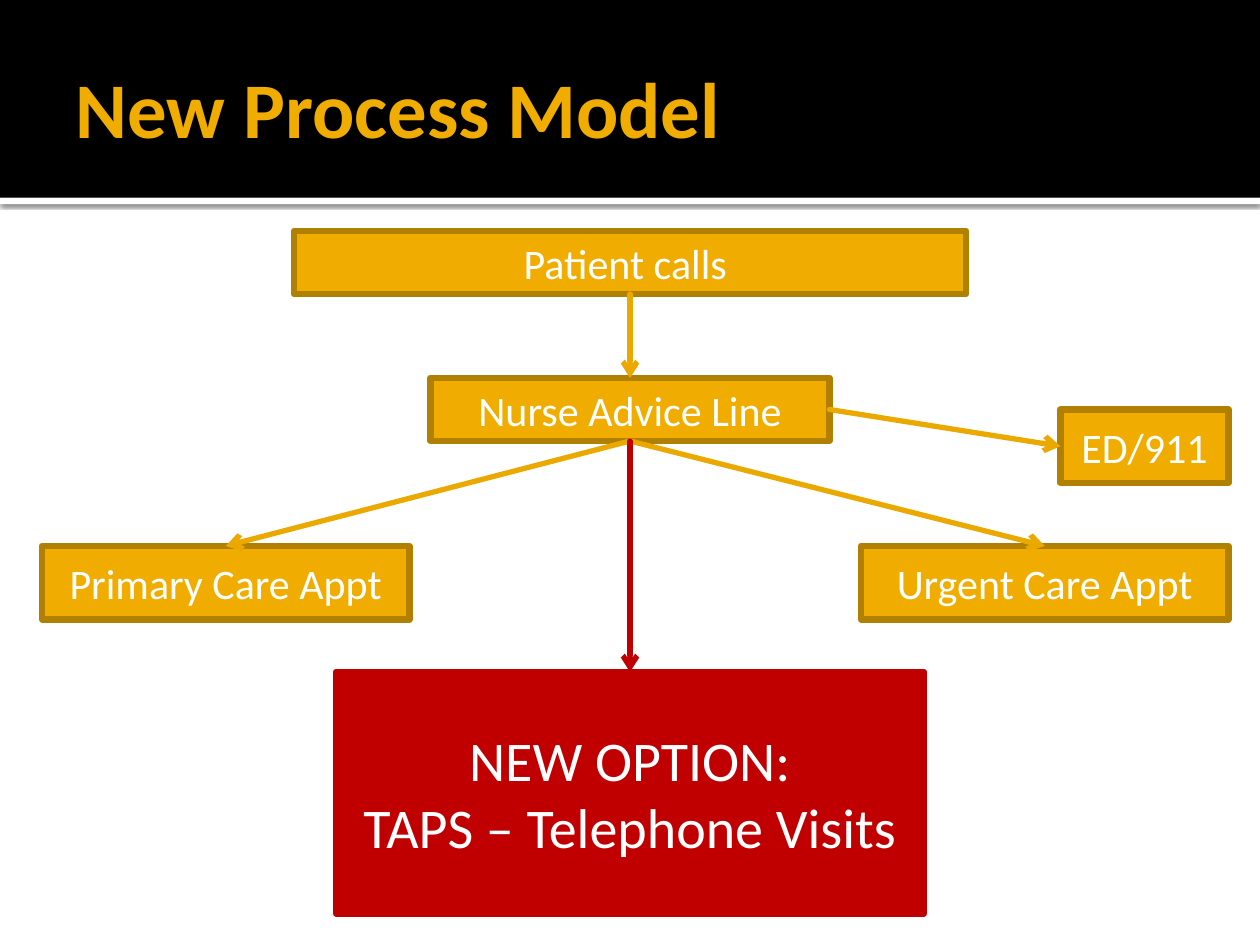
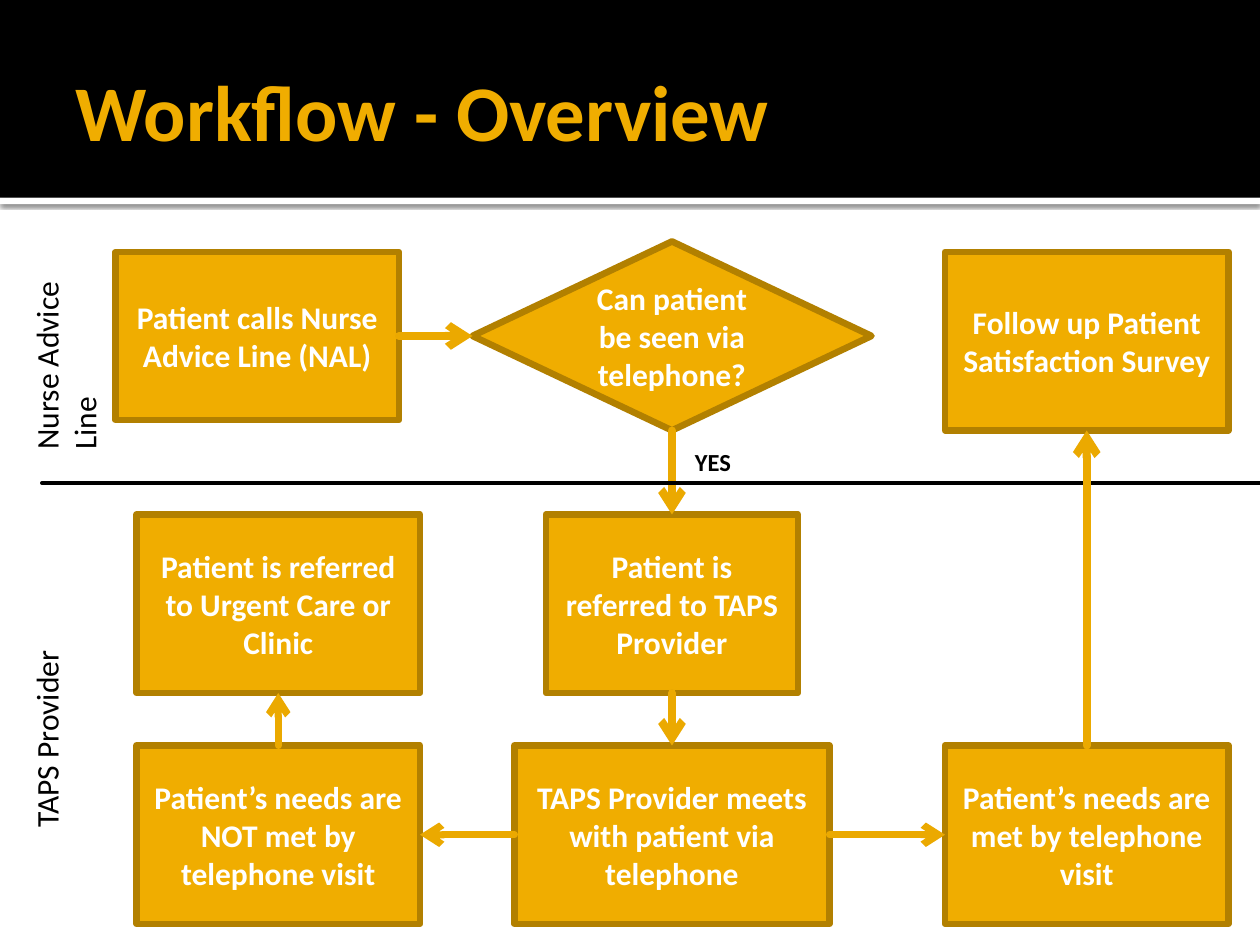
from lxml import etree
from pptx import Presentation
from pptx import util as u
from pptx.dml.color import RGBColor
from pptx.enum import shapes, text
from pptx.oxml.ns import qn

GOLD = RGBColor(0xF0, 0xAD, 0x00)
EDGE = RGBColor(0xB2, 0x80, 0x00)
ARROW = RGBColor(0xEB, 0xA9, 0x00)
RED = RGBColor(0xC0, 0x00, 0x00)
BLACK = RGBColor(0, 0, 0)
WHITE = RGBColor(255, 255, 255)
FONT = "Calibri"
RECT = shapes.MSO_SHAPE.RECTANGLE
DIAMOND = shapes.MSO_SHAPE.DIAMOND
TOP, LEFT, BOTTOM, RIGHT = range(4)
CELL = u.Inches(10) / 120  # the slide is a grid of 120 columns by 90 rows


def grid(*cells):
    return [round(n * CELL) for n in cells]


def style(par, size, color, bold=False, align=text.PP_ALIGN.LEFT):
    font = par.font
    font.name, font.size, font.bold = FONT, u.Pt(size), bold
    font.color.rgb = color
    par.alignment = align


def sub(node, tag, **attrs):
    return etree.SubElement(node, qn(tag), attrs)


def stroke(line, color, width, arrow=False):
    """Solid line with round ends and corners."""
    line.color.rgb = color
    line.width = u.Pt(width)
    ln = line._get_or_add_ln()
    ln.set("cap", "rnd")
    sub(ln, "a:round")
    if arrow:
        sub(ln, "a:tailEnd", type="arrow")


def band(slide, top, height, color):
    bar = slide.shapes.add_shape(RECT, 0, u.Inches(top), u.Inches(10),
                                 u.Inches(height))
    bar.fill.solid()
    bar.fill.fore_color.rgb = color
    bar.line.fill.background()
    bar.shadow.inherit = False
    return bar


def header(slide):
    """Draw the bands once and hand them to the shared layout."""
    strip = band(slide, 1.57, 0.05, WHITE)
    glow = sub(strip._element.spPr.find(qn("a:effectLst")), "a:outerShdw",
               blurRad=str(u.Pt(2.5)), dist=str(u.Pt(0.8)), dir="5400000",
               algn="tl", rotWithShape="0")
    tint = sub(glow, "a:srgbClr", val=str(BLACK))
    sub(tint, "a:alpha", val="60000")
    for bar in (strip, band(slide, 0, 1.57, BLACK)):
        slide.slide_layout.shapes._spTree.append(bar._element)


def head(slide, words, top, rows):
    title = slide.shapes.title
    title.left, title.top, title.width, title.height = grid(6, top, 108, rows)
    frame = title.text_frame
    frame.text = words
    frame.auto_size = text.MSO_AUTO_SIZE.NONE
    frame.vertical_anchor = text.MSO_ANCHOR.MIDDLE
    frame.margin_left = u.Inches(0.1)
    frame.margin_right = u.Inches(0.05)
    style(frame.paragraphs[0], 45, GOLD, True)


def box(slide, words, cells, size, bold=False, kind=RECT, fill=GOLD, edge=EDGE):
    node = slide.shapes.add_shape(kind, *grid(*cells))
    node.shadow.inherit = False
    node.fill.solid()
    node.fill.fore_color.rgb = fill
    stroke(node.line, edge, 3.78)
    frame = node.text_frame
    frame.word_wrap = True
    frame.vertical_anchor = text.MSO_ANCHOR.MIDDLE
    frame.text = words
    for par in frame.paragraphs:
        style(par, size, WHITE, bold, text.PP_ALIGN.CENTER)
    return node


def label(slide, words, cells, size, bold=False, upright=False):
    note = slide.shapes.add_textbox(*grid(*cells))
    frame = note.text_frame
    frame.word_wrap = True
    frame.auto_size = text.MSO_AUTO_SIZE.SHAPE_TO_FIT_TEXT
    frame.text = words
    style(frame.paragraphs[0], size, BLACK, bold)
    if upright:
        frame._txBody.bodyPr.set("vert", "vert270")


def rule(slide, ends, color, width, arrow=False):
    line = slide.shapes.add_connector(shapes.MSO_CONNECTOR.STRAIGHT,
                                      *grid(*ends))
    stroke(line.line, color, width, arrow)
    sub(line._element.spPr, "a:effectLst")
    return line


def link(slide, start, out, end, into, width, color=ARROW):
    line = rule(slide, (0, 0, 0, 0), color, width, True)
    line.begin_connect(start, out)
    line.end_connect(end, into)


def model(slide):
    head(slide, "New Process Model", 2, 16.4)
    # Steps
    calls = box(slide, "Patient calls ", (28, 22, 64, 6), 24)
    nurse = box(slide, "Nurse Advice Line", (41, 36, 38, 6), 24)
    clinic = box(slide, "Primary Care Appt", (4, 52, 35, 7), 24)
    urgent = box(slide, "Urgent Care Appt", (82, 52, 35, 7), 24)
    er = box(slide, "ED/911", (101, 39, 16, 7), 24)
    # Existing routes
    link(slide, calls, BOTTOM, nurse, TOP, 3)
    for goal in (clinic, urgent):
        link(slide, nurse, BOTTOM, goal, TOP, 3)
    link(slide, nurse, RIGHT, er, LEFT, 3)
    # New route
    taps = box(slide, "NEW OPTION:\nTAPS – Telephone Visits",
               (32, 64, 56, 23), 32, fill=RED, edge=RED)
    link(slide, nurse, BOTTOM, taps, TOP, 3, RED)


def flow(slide):
    head(slide, "Workflow - Overview", 4, 13)

    def step(words, left, top, cols, rows=17, kind=RECT):
        return box(slide, words, (left, top, cols, rows), 18, True, kind)

    # Nurse line lane
    calls = step("Patient calls Nurse Advice Line (NAL)", 11, 24, 27, 16)
    choice = step("Can patient be seen via telephone?", 45, 23, 38, 18, DIAMOND)
    survey = step("Follow up Patient Satisfaction Survey", 90, 24, 27)
    # Provider lane
    clinic = step("Patient is referred to Urgent Care or Clinic", 13, 49, 27)
    refer = step("Patient is referred to TAPS Provider", 52, 49, 24)
    unmet = step("Patient’s needs are NOT met by telephone visit", 13, 71, 27)
    visit = step("TAPS Provider meets with patient via telephone", 49, 71, 30)
    met = step("Patient’s needs are met by telephone visit", 90, 71, 27)
    # Arrows and lane divider
    link(slide, calls, RIGHT, choice, LEFT, 4.5)
    link(slide, choice, BOTTOM, refer, TOP, 4.5)
    link(slide, refer, BOTTOM, visit, TOP, 4.5)
    rule(slide, (4, 46, 120, 46), BLACK, 2.25)
    link(slide, met, TOP, survey, BOTTOM, 4.5)
    link(slide, visit, RIGHT, met, LEFT, 4)
    link(slide, visit, LEFT, unmet, RIGHT, 4)
    link(slide, unmet, TOP, clinic, BOTTOM, 4)
    # Labels
    label(slide, "YES", (65, 42, 7, 4), 14, True)
    label(slide, "Nurse Advice Line", (2, 20, 6, 24), 18, upright=True)
    label(slide, "TAPS Provider", (2, 59, 6, 21), 18, upright=True)


def main():
    deck = Presentation()
    deck.slide_width, deck.slide_height = grid(120, 90)
    plain = deck.slide_layouts.get_by_name("Title Only")
    first, second = [deck.slides.add_slide(plain) for _ in range(2)]
    header(first)
    model(first)
    flow(second)
    deck.save("out.pptx")


if __name__ == "__main__":
    main()
